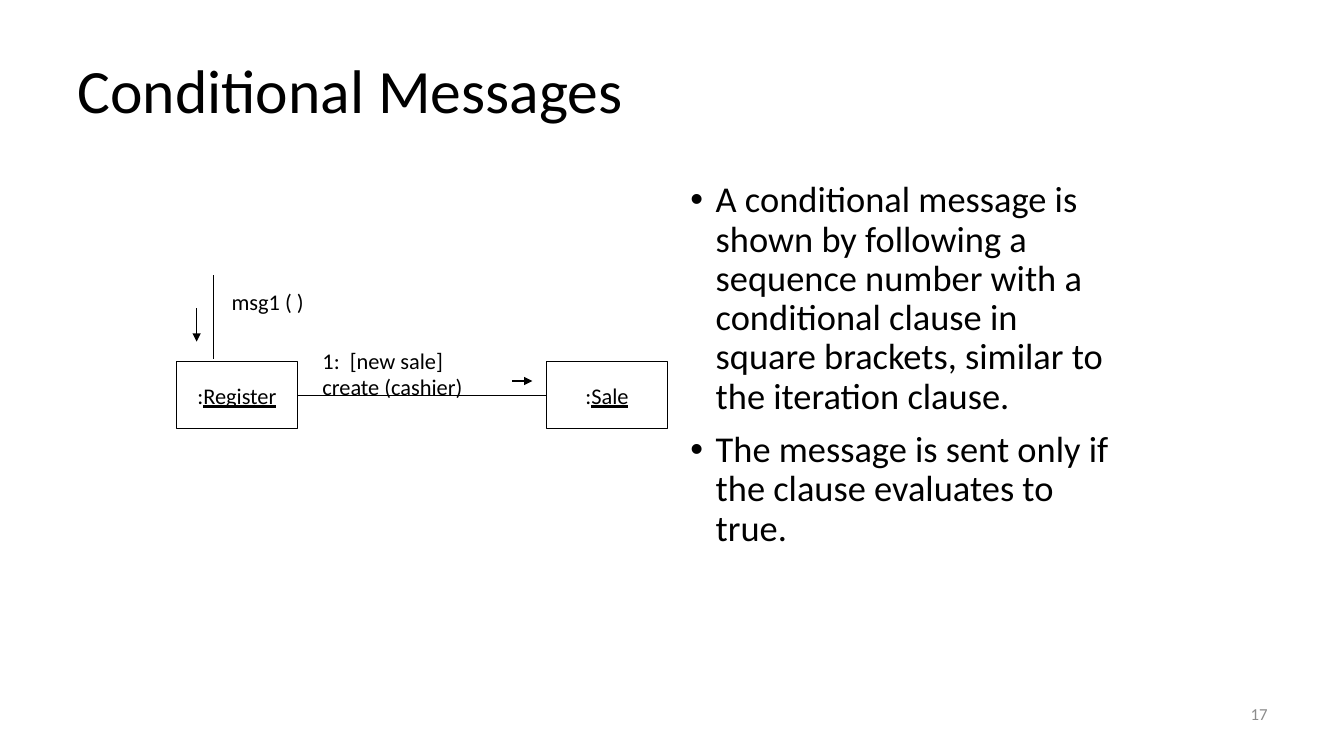
import pptx
import pptx.util
import pptx.dml.color
import pptx.enum.shapes
import pptx.enum.text
import pptx.oxml.ns
import lxml.etree
from dataclasses import dataclass

Inches = pptx.util.Inches
Pt = pptx.util.Pt
ALIGN = pptx.enum.text.PP_ALIGN
ANCHOR = pptx.enum.text.MSO_ANCHOR

TITLE = "Conditional Messages"
BULLETS = [
    "A conditional message is shown by following a sequence number with a "
    "conditional clause in square brackets, similar to the iteration clause.",
    "The message is sent only if the clause evaluates to true.",
]
OBJECTS = {"Register": 1.75, "Sale": 5.42}
OBJECT_TOP, OBJECT_W, OBJECT_H = 3.59, 1.2, 0.66
LABELS = [
    (["msg1 ( )"], (2.2, 2.81, 0.93, 0.37)),
    (["1:  [new sale]", "create (cashier)"], (3.1, 3.39, 1.61, 0.64)),
]
LINES = [
    ((2.12, 2.73), (2.12, 3.56), False),
    ((1.95, 3.06), (1.95, 3.39), True),
    ((5.08, 3.78), (5.28, 3.78), True),
]
PAGE_NUMBER = "17"


@dataclass(frozen=True)
class Theme:
    font: str = "Calibri"
    ink: str = "000000"
    paper: str = "FFFFFF"
    muted: str = "8C8C8C"
    title: int = 44
    body: int = 26
    label: int = 16
    number: int = 12
    line: float = 0.75


THEME = Theme()


def rgb(value):
    return pptx.dml.color.RGBColor.from_string(value)


def add_xml(parent, tag, **attrs):
    return lxml.etree.SubElement(parent, pptx.oxml.ns.qn(tag), attrs)


def write(sp, paragraphs, size, color=THEME.ink, align=ALIGN.LEFT,
          anchor=ANCHOR.TOP, wrap=True, spacing=None, gap=0, bullet=False):
    tf = sp.text_frame
    tf.word_wrap = wrap
    tf.vertical_anchor = anchor
    for i, runs in enumerate(paragraphs):
        p = tf.add_paragraph() if i else tf.paragraphs[0]
        p.alignment = align
        if spacing:
            p.line_spacing = spacing
        if i and gap:
            p.space_before = Pt(gap)
        if bullet:
            pPr = p._p.get_or_add_pPr()
            pPr.set("marL", str(Inches(0.25)))
            pPr.set("indent", str(Inches(-0.25)))
            add_xml(pPr, "a:buFont", typeface="Arial")
            add_xml(pPr, "a:buChar", char="•")
        for text, underline in runs:
            r = p.add_run()
            r.text = text
            r.font.name = THEME.font
            r.font.size = Pt(size)
            r.font.color.rgb = rgb(color)
            if underline:
                r.font.underline = True


def add_text(s, box, lines, size, **fmt):
    sp = s.shapes.add_textbox(*map(Inches, box))
    write(sp, [[(line, False)] for line in lines], size, **fmt)


def add_object(s, name, left):
    sp = s.shapes.add_shape(
        pptx.enum.shapes.MSO_SHAPE.RECTANGLE,
        *map(Inches, (left, OBJECT_TOP, OBJECT_W, OBJECT_H)))
    sp.shadow.inherit = False
    sp.fill.solid()
    sp.fill.fore_color.rgb = rgb(THEME.paper)
    sp.line.color.rgb = rgb(THEME.ink)
    sp.line.width = Pt(THEME.line)
    write(sp, [[(":", False), (name, True)]], THEME.label,
          align=ALIGN.CENTER, anchor=ANCHOR.MIDDLE, wrap=False)
    return sp


def add_line(s, start, end, arrow=False):
    line = s.shapes.add_connector(
        pptx.enum.shapes.MSO_CONNECTOR.STRAIGHT, *map(Inches, start + end))
    line.line.color.rgb = rgb(THEME.ink)
    line.line.width = Pt(THEME.line)
    if arrow:
        add_xml(line.line._get_or_add_ln(), "a:tailEnd", type="triangle")
    add_xml(line._element.spPr, "a:effectLst")
    return line


def main():
    prs = pptx.Presentation()
    prs.slide_width, prs.slide_height = Inches(13.33), Inches(7.5)
    s = prs.slides.add_slide(prs.slide_layouts[6])

    add_text(s, (0.67, 0.3, 12, 1.25), [TITLE], THEME.title,
             anchor=ANCHOR.MIDDLE, spacing=0.9)
    add_text(s, (6.75, 1.75, 4.41, 4.95), BULLETS, THEME.body,
             spacing=0.9, gap=10, bullet=True)
    add_text(s, (9.56, 6.83, 3.11, 0.5), [PAGE_NUMBER], THEME.number,
             color=THEME.muted, align=ALIGN.RIGHT, anchor=ANCHOR.MIDDLE)

    register, sale = [add_object(s, *item) for item in OBJECTS.items()]
    middle = OBJECT_TOP + OBJECT_H / 2
    link = add_line(s, (OBJECTS["Register"] + OBJECT_W, middle),
                    (OBJECTS["Sale"], middle))
    link.begin_connect(register, 3)
    link.end_connect(sale, 1)

    for start, end, arrow in LINES:
        add_line(s, start, end, arrow)
    for lines, box in LABELS:
        add_text(s, box, lines, THEME.label, wrap=False)

    prs.save("out.pptx")


if __name__ == "__main__":
    main()
